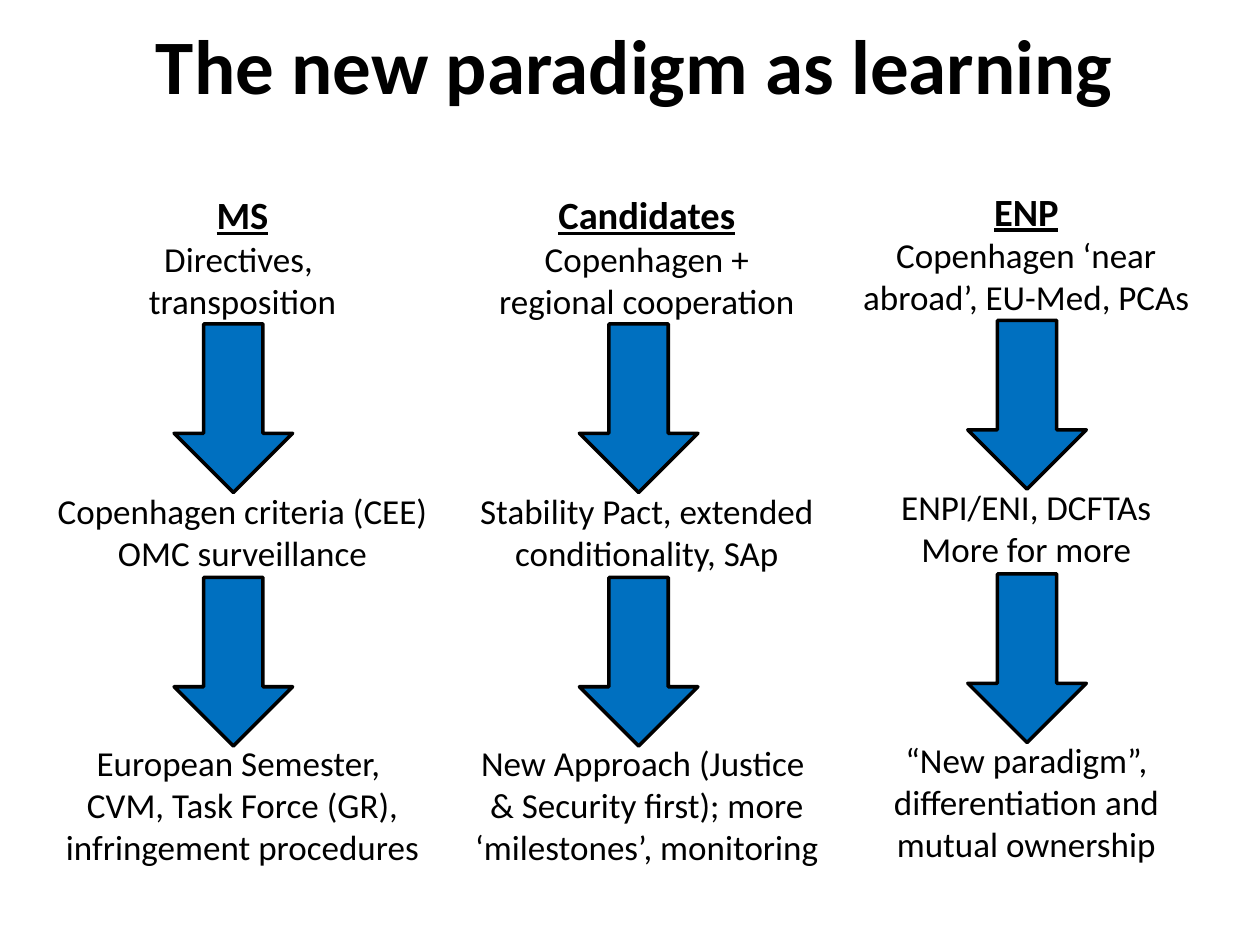
import pptx
import pptx.dml.color
import pptx.enum.shapes
import pptx.enum.text
import pptx.util

Cm, Pt = pptx.util.Cm, pptx.util.Pt
RGB = pptx.dml.color.RGBColor.from_string
CENTER = pptx.enum.text.PP_ALIGN.CENTER

THEME = {
    "font": "Calibri",
    "text": RGB("000000"),
    "arrow": RGB("0070C0"),
    "outline": RGB("000000"),
    "title": Pt(44),
    "heading": Pt(22),
    "body": Pt(20),
    "outline_width": Pt(2),
    "stage_gap": Pt(96),
}
COLUMN_WIDTH, COLUMN_HEIGHT = Cm(8), Cm(14.02)
ARROW_WIDTH, ARROW_HEIGHT = Cm(2.39), Cm(3.4)
ARROW_OFFSETS = (Cm(2.8), Cm(7.91))  # below the top of the column

# Each column: left, top, arrow left, heading, stages made of paragraphs
COLUMNS = [
    (Cm(0.89), Cm(3.73), Cm(3.51), "MS", [
        ["Directives, \vtransposition"],
        ["Copenhagen criteria (CEE) OMC surveillance"],
        ["European Semester, \vCVM, Task Force (GR), infringement procedures"],
    ]),
    (Cm(9.04), Cm(3.73), Cm(11.68), "Candidates", [
        ["Copenhagen +\vregional cooperation"],
        ["Stability Pact, extended conditionality, SAp"],
        ["New Approach (Justice \v& Security first); more ‘milestones’, monitoring"],
    ]),
    (Cm(16.69), Cm(3.66), Cm(19.51), "ENP", [
        ["Copenhagen ‘near abroad’, EU-Med, PCAs"],
        ["ENPI/ENI, DCFTAs", "More for more"],
        ["“New paradigm”, differentiation and mutual ownership"],
    ]),
]


def write(para, text, size, **extra):
    """Fill a centred paragraph and format all its spans."""
    para.text = text
    para.alignment = CENTER
    values = {"name": THEME["font"], "size": size, "bold": False, **extra}
    for span in para.runs:
        span.font.color.rgb = THEME["text"]
        for name, value in values.items():
            setattr(span.font, name, value)


deck = pptx.Presentation()
deck.slide_width, deck.slide_height = Cm(25.4), Cm(19.05)
page = deck.slides.add_slide(deck.slide_layouts[5])

title = page.shapes.title
place = {"left": Cm(1.7), "top": Cm(0.53), "width": Cm(22.2), "height": Cm(1.85)}
for name, value in place.items():
    setattr(title, name, value)
title.text_frame.auto_size = pptx.enum.text.MSO_AUTO_SIZE.SHAPE_TO_FIT_TEXT
title.text_frame.vertical_anchor = pptx.enum.text.MSO_ANCHOR.TOP
write(title.text_frame.paragraphs[0], "The new paradigm as learning",
      THEME["title"], bold=True)
title.text_frame.paragraphs[0].line_spacing = THEME["title"]

for left, top, arrow_left, heading, stages in COLUMNS:
    box = page.shapes.add_textbox(left, top, COLUMN_WIDTH, COLUMN_HEIGHT)
    frame = box.text_frame
    frame.word_wrap = True
    write(frame.paragraphs[0], heading, THEME["heading"], bold=True, underline=True)
    for stage_number, stage in enumerate(stages):
        for line_number, text in enumerate(stage):
            para = frame.add_paragraph()
            write(para, text, THEME["body"])
            if stage_number and not line_number:
                para.space_before = THEME["stage_gap"]

    for offset in ARROW_OFFSETS:
        arrow = page.shapes.add_shape(
            pptx.enum.shapes.MSO_SHAPE.DOWN_ARROW,
            arrow_left, top + offset, ARROW_WIDTH, ARROW_HEIGHT)
        arrow.shadow.inherit = False
        arrow.fill.solid()
        arrow.fill.fore_color.rgb = THEME["arrow"]
        arrow.line.color.rgb = THEME["outline"]
        arrow.line.width = THEME["outline_width"]

deck.save("out.pptx")
